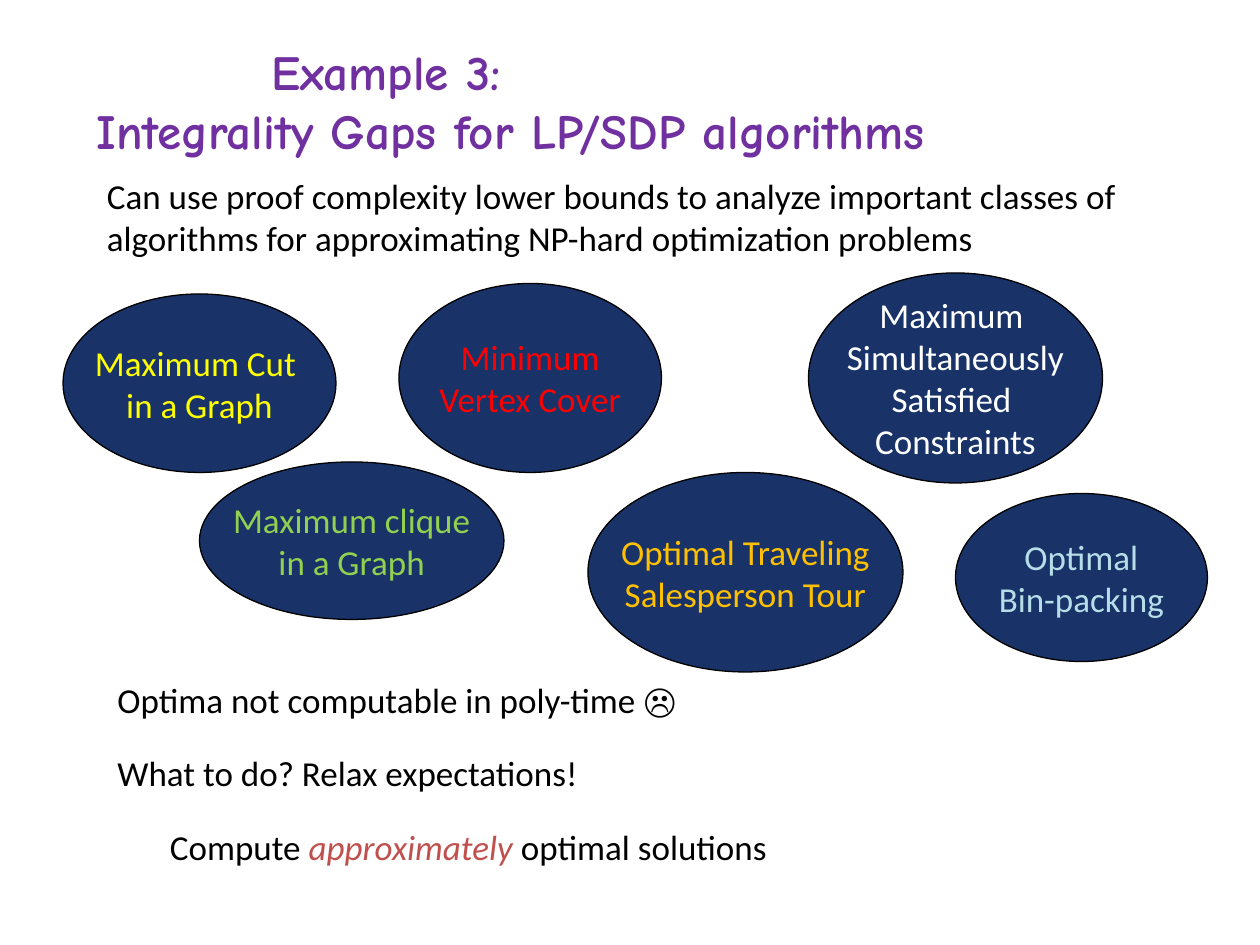
from pptx import Presentation
from pptx.dml.color import RGBColor
from pptx.enum.shapes import MSO_SHAPE
from pptx.enum.text import MSO_ANCHOR, PP_ALIGN
from pptx.util import Inches, Pt

OVAL = MSO_SHAPE.OVAL
MIDDLE = MSO_ANCHOR.MIDDLE
CENTER = PP_ALIGN.CENTER

CELL = Inches(1) / 12  # the slide is 120 columns by 90 rows
COLUMNS, ROWS = 120, 90

COLORS = {
    "title": "7030A0", "text": "000000", "accent": "C0504D",
    "oval": "193369", "outline": "000000",
    "yellow": "FFFF00", "red": "FF0000", "orange": "FFC000",
    "pale blue": "B7DEE8", "white": "FFFFFF", "green": "92D050",
}

# Grid box (column, row, columns, rows), text colour, lines
PROBLEMS = [
    ((6, 28, 26, 17), "yellow", ["Maximum Cut ", "in a Graph"]),
    ((38, 27, 25, 18), "red", ["Minimum", "Vertex Cover"]),
    ((56, 45, 30, 19), "orange", ["Optimal Traveling", "Salesperson Tour"]),
    ((91, 47, 24, 16), "pale blue", ["Optimal", "Bin-packing"]),
    ((77, 26, 28, 20), "white",
     ["Maximum ", "Simultaneously", "Satisfied ", "Constraints"]),
    ((19, 44, 29, 15), "green", ["Maximum clique", "in a Graph"]),
]


def color(name):
    return RGBColor.from_string(COLORS[name])


def grid(*cells):
    return [round(cell * CELL) for cell in cells]


def style(para, color_name, size=20, name="Calibri", bold=False):
    font = para.font
    font.size, font.name, font.bold = Pt(size), name, bold
    font.color.rgb = color(color_name)


def add_title(page, box, lines):
    """Place the title lines, each given with its indent in columns."""
    frame = page.shapes.add_textbox(*grid(*box)).text_frame
    frame.word_wrap = True
    frame.vertical_anchor = MIDDLE
    frame.margin_top = Inches(0.52)
    for index, (indent, line) in enumerate(lines):
        para = frame.add_paragraph() if index else frame.paragraphs[0]
        para.text = line
        para._p.get_or_add_pPr().set("marL", str(round(indent * CELL)))
        style(para, "title", 28, "Comic Neue", True)


def add_statement(page, box, *spans, wrap=True):
    """Place one paragraph; every second span is emphasised."""
    frame = page.shapes.add_textbox(*grid(*box)).text_frame
    frame.word_wrap = wrap
    para = frame.paragraphs[0]
    style(para, "text")
    for index, words in enumerate(spans):
        span = para.add_run()
        span.text = words
        if index % 2:
            span.font.italic = True
            span.font.color.rgb = color("accent")


def add_problem(page, box, color_name, lines):
    oval = page.shapes.add_shape(OVAL, *grid(*box))
    oval.shadow.inherit = False
    oval.fill.solid()
    oval.fill.fore_color.rgb = color("oval")
    oval.line.color.rgb = color("outline")
    oval.line.width = Pt(0.75)
    frame = oval.text_frame
    frame.word_wrap = False
    frame.vertical_anchor = MIDDLE
    for index, line in enumerate(lines):
        para = frame.add_paragraph() if index else frame.paragraphs[0]
        para.text = line
        para.alignment = CENTER
        style(para, color_name)


def main():
    deck = Presentation()
    deck.slide_width, deck.slide_height = grid(COLUMNS, ROWS)
    page = deck.slides.add_slide(deck.slide_layouts[6])

    add_title(page, (8, -0.25, 118, 14),
              [(16.7, "Example 3:"),
               (0, "Integrality Gaps for LP/SDP algorithms")])
    add_statement(page, (9, 16, 105, 9.25),
                  "Can use proof complexity lower bounds to analyze important "
                  "classes of algorithms for approximating NP-hard "
                  "optimization problems")
    for box, color_name, lines in PROBLEMS:
        add_problem(page, box, color_name, lines)
    add_statement(page, (10, 64, 56, 5.25),
                  "Optima not computable in poly-time ☹", wrap=False)
    add_statement(page, (10, 71, 46.7, 5.25),
                  "What to do? Relax expectations!", wrap=False)
    add_statement(page, (15, 78, 78, 5.25),
                  "Compute ", "approximately", " optimal solutions")
    deck.save("out.pptx")


if __name__ == "__main__":
    main()
